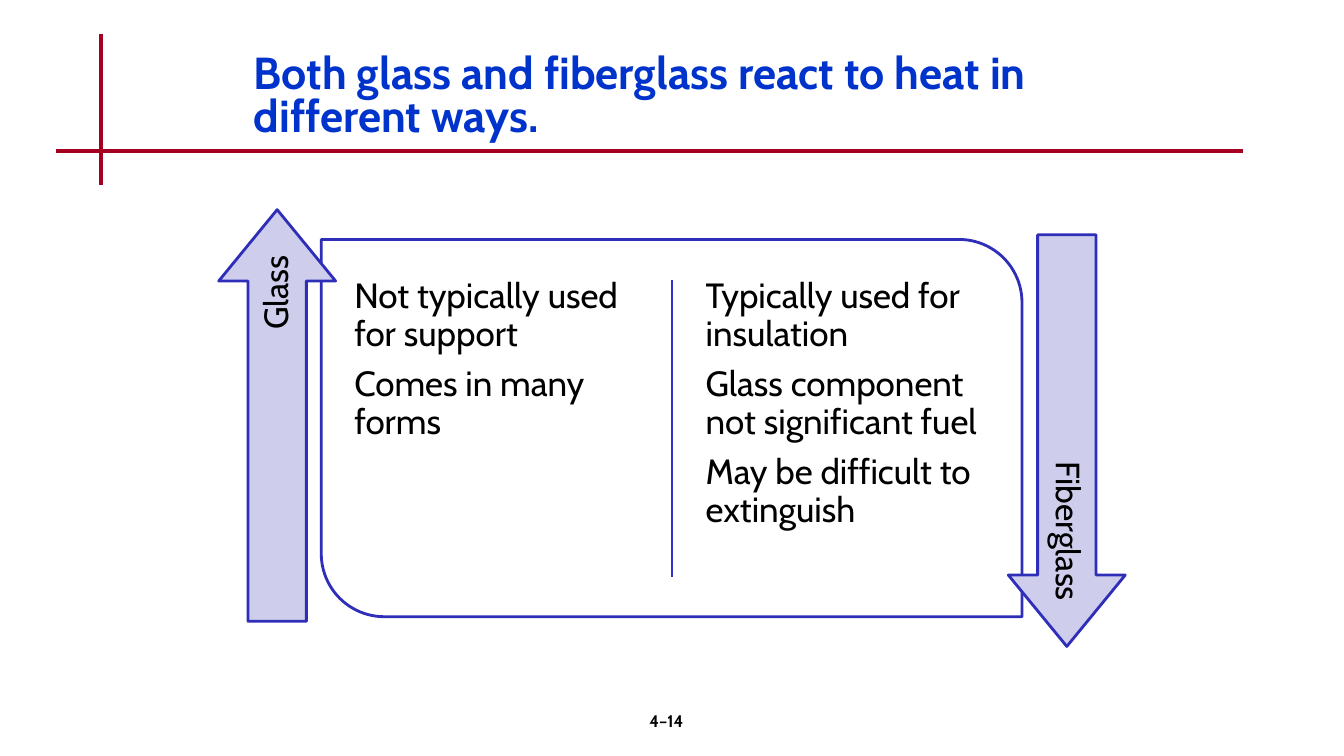
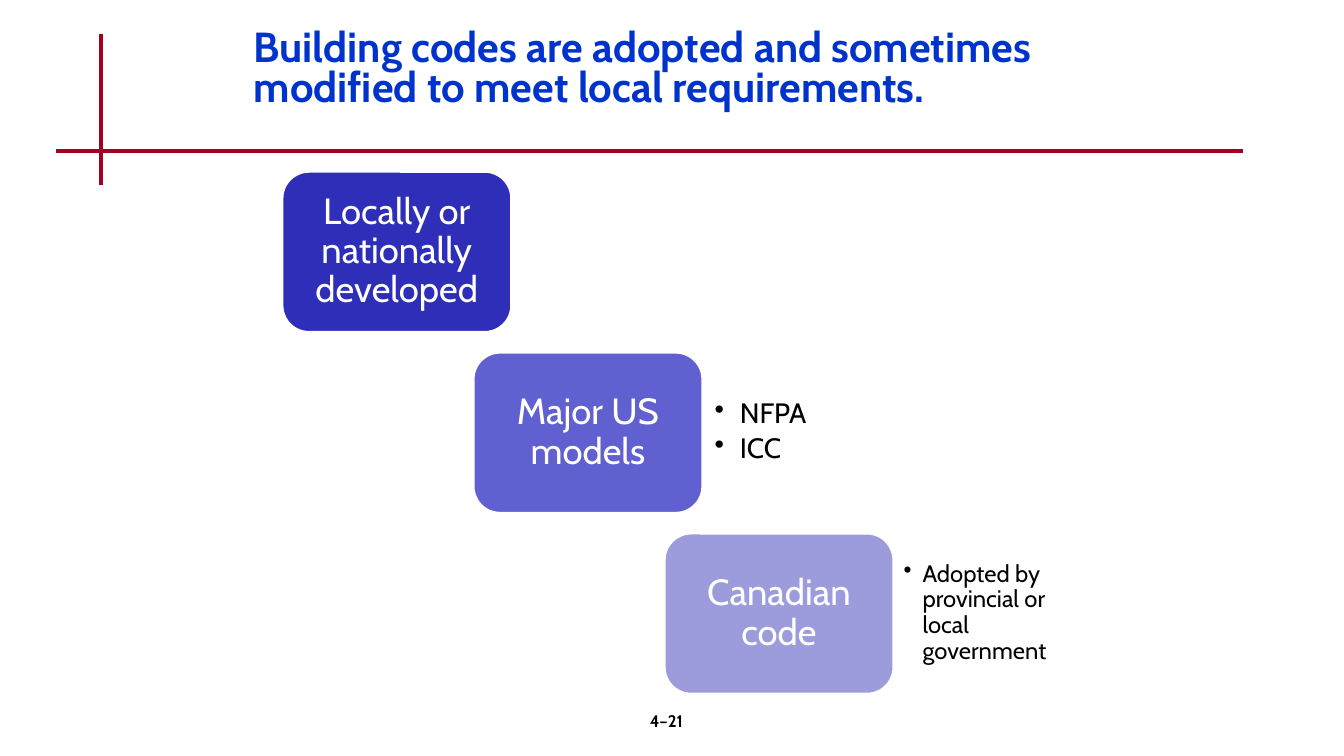
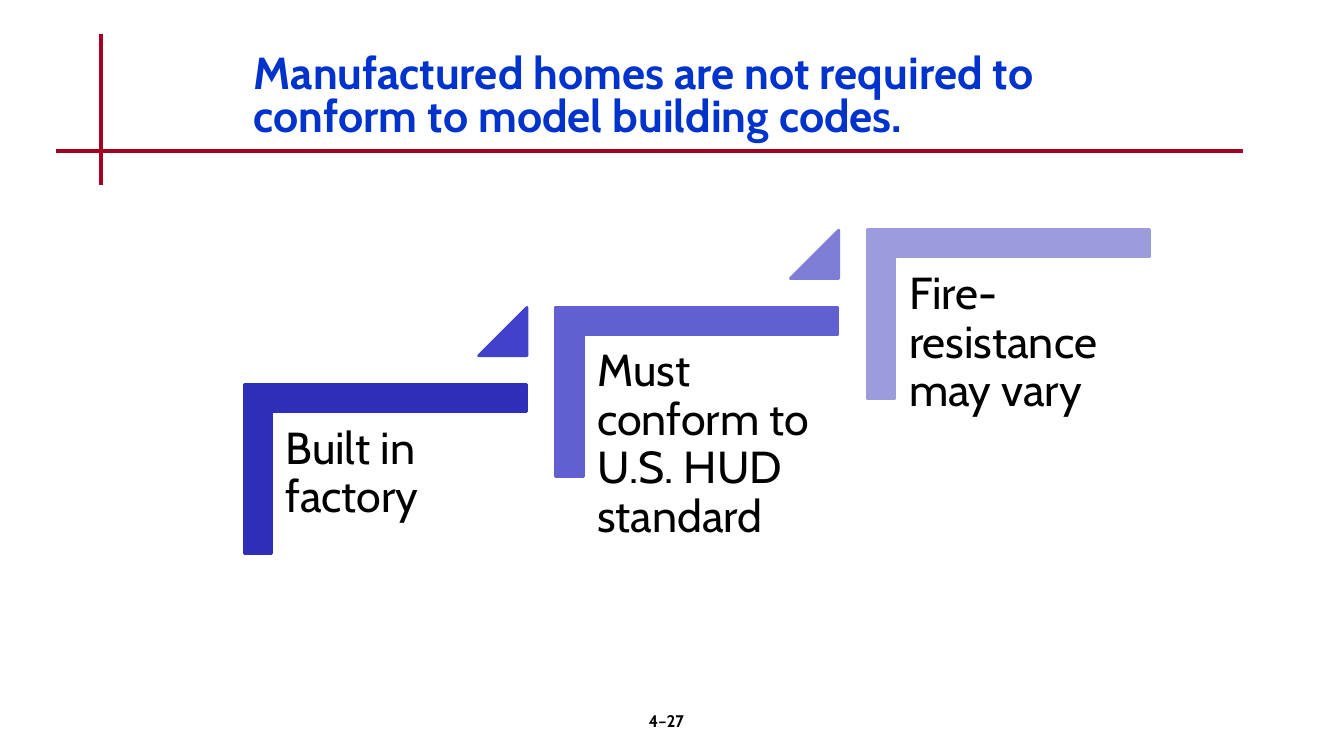
from lxml import etree
from pptx import Presentation
from pptx.dml.color import RGBColor
from pptx.enum.shapes import MSO_CONNECTOR, MSO_SHAPE
from pptx.enum.text import MSO_ANCHOR, MSO_AUTO_SIZE, PP_ALIGN
from pptx.oxml.ns import qn
from pptx.util import Pt

STRAIGHT = MSO_CONNECTOR.STRAIGHT
LEFT, CENTER, RIGHT = PP_ALIGN.LEFT, PP_ALIGN.CENTER, PP_ALIGN.RIGHT
TOP, MIDDLE = MSO_ANCHOR.TOP, MSO_ANCHOR.MIDDLE

FONT = "Cabin"
BLACK = RGBColor(0x00, 0x00, 0x00)
WHITE = RGBColor(0xFF, 0xFF, 0xFF)
TITLE_BLUE = RGBColor(0x00, 0x33, 0xCC)
RULE_RED = RGBColor(0xA5, 0x00, 0x21)
DIVIDER_BLUE = RGBColor(0x33, 0x33, 0xCC)
ARROW_FILL = RGBColor(0xCE, 0xCE, 0xEC)
DARK = RGBColor(0x2E, 0x2E, 0xB9)
MEDIUM = RGBColor(0x60, 0x60, 0xD0)
LIGHT = RGBColor(0x9C, 0x9C, 0xDD)
DARK_TRIANGLE = RGBColor(0x41, 0x41, 0xCB)
LIGHT_TRIANGLE = RGBColor(0x7E, 0x7E, 0xD6)


def write(box, lines, size, color=BLACK, bold=False, align=LEFT, anchor=TOP,
          margins=(7.2, 7.2), spacing=0.9, after=0, indent=0):
    """Fill a box with paragraphs; margins are (sides, top and bottom)."""
    frame = box.text_frame
    frame.text = "\n".join(lines)
    frame.word_wrap = True
    frame.auto_size = MSO_AUTO_SIZE.NONE
    frame.vertical_anchor = anchor
    frame.margin_left = frame.margin_right = Pt(margins[0])
    frame.margin_top = frame.margin_bottom = Pt(margins[1])
    for para in frame.paragraphs:
        if indent:
            properties = para._p.get_or_add_pPr()
            properties.set("marL", str(Pt(indent)))
            properties.set("indent", str(-Pt(indent)))
            etree.SubElement(properties, qn("a:buChar")).set("char", "•")
        para.alignment = align
        para.line_spacing = spacing
        para.space_after = Pt(after)
        for span in para.runs:
            span.font.name = FONT
            span.font.size = Pt(size)
            span.font.bold = bold
            span.font.color.rgb = color


def paint(item, line_color, width=2, fill=None):
    """Colour a shape, or a connector when no fill is given, without shadow."""
    item.line.color.rgb = line_color
    item.line.width = Pt(width)
    if fill is None:
        etree.SubElement(item.element.spPr, qn("a:effectLst"))
    else:
        item.fill.solid()
        item.fill.fore_color.rgb = fill
        item.shadow.inherit = False


deck = Presentation()
deck.slide_width, deck.slide_height = Pt(960), Pt(540)
layout = deck.slide_layouts[5]
for holder in list(layout.placeholders)[1:]:
    layout.shapes.element.remove(holder.element)

# Titles and page numbers
pages = []
for title, top, size, number in [
    ("Both glass and fiberglass react to heat in different ways.", 36, 32, "4–14"),
    ("Building codes are adopted and sometimes modified to meet local requirements.",
     18, 30, "4–21"),
    ("Manufactured homes are not required to conform to model building codes.",
     36, 32, "4–27"),
]:
    page = deck.slides.add_slide(layout)
    heading = page.shapes.title
    heading.left, heading.top, heading.width, heading.height = Pt(174), Pt(top), Pt(636), Pt(72)
    write(heading, [title], size, TITLE_BLUE, bold=True, margins=(7.2, 3.6), spacing=0.8)
    footer = page.shapes.add_textbox(Pt(376), Pt(504), Pt(200), Pt(36))
    write(footer, [number], 12, bold=True, align=CENTER, margins=(7.2, 3.6), spacing=1.0)
    pages.append(page)
glass_page, codes_page, homes_page = pages

# Crossed rules, shared through the layout
rules = [glass_page.shapes.add_connector(STRAIGHT, Pt(x1), Pt(y1), Pt(x2), Pt(y2))
         for x1, y1, x2, y2 in [(72, 24, 72, 132), (40, 108, 888, 108)]]
for rule in rules:
    paint(rule, RULE_RED, 3)
    layout.shapes.element.append(rule.element)

# Glass and fiberglass
shapes = glass_page.shapes
panel = shapes.add_shape(MSO_SHAPE.ROUND_2_DIAG_RECTANGLE, Pt(229.5), Pt(171), Pt(500.5), Pt(269.5))
panel.adjustments[0], panel.adjustments[1] = 0, 0.167
paint(panel, DARK, fill=WHITE)
divider = shapes.add_connector(STRAIGHT, Pt(480), Pt(200), Pt(480), Pt(412))
paint(divider, DIVIDER_BLUE)

for name, column_left, lines, arrow_left, arrow_top, rotation in [
    ("Glass", 246, ["Not typically used for support", "Comes in many forms"], 51, 255, 270),
    ("Fiberglass", 497, ["Typically used for insulation", "Glass component not significant fuel",
                         "May be difficult to extinguish"], 615, 273, 90),
]:
    column = shapes.add_textbox(Pt(column_left), Pt(191.5), Pt(217), Pt(228))
    write(column, lines, 25, after=9)
    arrow = shapes.add_shape(MSO_SHAPE.RIGHT_ARROW, Pt(arrow_left), Pt(arrow_top), Pt(294), Pt(83.5))
    arrow.adjustments[0], arrow.adjustments[1] = 0.5, 0.61
    arrow.rotation = rotation
    paint(arrow, DARK, fill=ARROW_FILL)
    write(arrow, [name], 24, align=RIGHT, anchor=MIDDLE)

# Staircase of building codes
shapes = codes_page.shapes
for step, (label, fill, notes, size, margin, indent) in enumerate([
    ("Locally or nationally developed", DARK, [], 0, 0, 0),
    ("Major US models", MEDIUM, ["NFPA", "ICC"], 20, 8, 18),
    ("Canadian code", LIGHT, ["Adopted by provincial or local government"], 17, 6.5, 13.5),
]):
    left, top = 201.5 + 136.5 * step, 122.4 + 129.2 * step
    tile = shapes.add_shape(MSO_SHAPE.ROUNDED_RECTANGLE, Pt(left), Pt(top), Pt(164), Pt(115))
    tile.adjustments[0] = 0.167
    paint(tile, WHITE, fill=fill)
    write(tile, [label], 26, WHITE, align=CENTER, anchor=MIDDLE, margins=(8, 8))
    if notes:
        note_box = shapes.add_textbox(Pt(left + 164.5), Pt(top + 10.5), Pt(119.5), Pt(93))
        write(note_box, notes, size, anchor=MIDDLE, margins=(margin, margin), after=3, indent=indent)

# Rising steps of manufactured homes
shapes = homes_page.shapes
for step, (label, color, triangle_color) in enumerate([
    ("Built in factory", DARK, DARK_TRIANGLE),
    ("Must conform to U.S. HUD standard", MEDIUM, LIGHT_TRIANGLE),
    ("Fire-resistance may vary", LIGHT, None),
]):
    left, top = 194.4 + 222.7 * step, 219.6 - 55.2 * step
    corner = shapes.add_shape(MSO_SHAPE.CORNER, Pt(left + 20.2), Pt(top + 14.6), Pt(121), Pt(201.5))
    corner.adjustments[0] = corner.adjustments[1] = 0.161
    corner.rotation = 90
    paint(corner, color, fill=color)
    label_box = shapes.add_textbox(Pt(left), Pt(top + 74.8), Pt(182), Pt(159))
    write(label_box, [label], 32, margins=(9.5, 9.5))
    if triangle_color:
        triangle = shapes.add_shape(MSO_SHAPE.ISOSCELES_TRIANGLE, Pt(left + 147.5), Pt(top),
                                    Pt(34.5), Pt(34.5))
        triangle.adjustments[0] = 1
        paint(triangle, triangle_color, fill=triangle_color)

deck.save("out.pptx")
